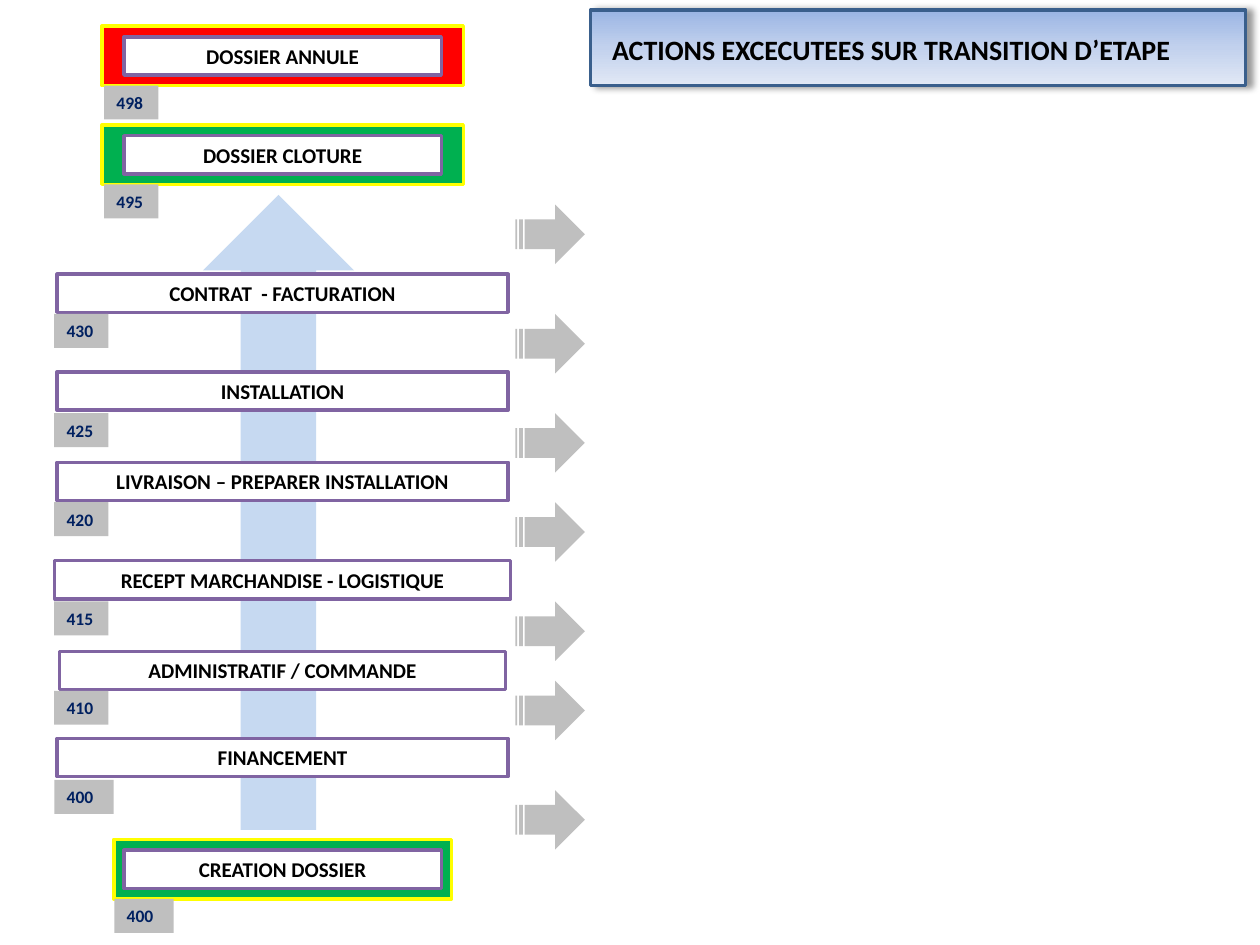
from copy import deepcopy
from dataclasses import dataclass

from lxml.etree import SubElement
from pptx import Presentation
from pptx.dml.color import RGBColor
from pptx.enum.shapes import MSO_SHAPE as Preset
from pptx.enum.text import MSO_AUTO_SIZE as AutoSize, PP_ALIGN as Align
from pptx.oxml.ns import qn
from pptx.shapes.autoshape import Shape
from pptx.util import Pt

COLORS = {
    "black": "000000",
    "white": "FFFFFF",
    "navy": "002060",
    "purple": "8064A2",
    "yellow": "FFFF00",
    "red": "FF0000",
    "green": "00B050",
    "gray": "BFBFBF",
    "pale_blue": "C6D9F1",
    "title_line": "3A5F8C",
    "title_top": "9AB5E4",
    "title_middle": "C2D1ED",
    "title_bottom": "E1E8F5",
}
FONT = "Calibri"
CENTER_X = 161.5
LABEL_HEIGHT = 21.8
TAG_WIDTH, TAG_HEIGHT = 31, 19.4
WIDE_TAG_WIDTH = 34
STEP_TAG_LEFT = 31
END_LABEL_WIDTH = 181.4
FRAME_HEIGHT = 33.9
TRANSITION_LEFT = 294.5


@dataclass
class EndState:
    name: str
    code: str
    top: float
    color: str
    width: float = 206.6
    tag_left: float = 59.5
    tag_width: float = TAG_WIDTH


@dataclass
class Step:
    name: str
    code: str
    top: float
    tag_top: float
    width: float = 257.8
    tag_width: float = TAG_WIDTH


END_STATES = [
    EndState("DOSSIER ANNULE", "498", 15, "red"),
    EndState("DOSSIER CLOTURE", "495", 71.5, "green"),
    EndState("CREATION DOSSIER", "400", 479.8, "green", 193, 65.3, WIDE_TAG_WIDTH),
]
STEPS = [
    Step("CONTRAT  - FACTURATION", "430", 156.7, 179.4),
    Step("INSTALLATION", "425", 212.5, 236.1),
    Step("LIVRAISON – PREPARER INSTALLATION", "420", 264.2, 287),
    Step("RECEPT MARCHANDISE - LOGISTIQUE", "415", 320.4, 343.7, 260.6),
    Step("ADMINISTRATIF / COMMANDE", "410", 372.2, 394.8, 254.9),
    Step("FINANCEMENT", "400", 422, 445.7, tag_width=WIDE_TAG_WIDTH),
]
TRANSITION_TOPS = [116.9, *(step.tag_top for step in STEPS[:4]), 389, 451.5]


def rgb(color: str) -> RGBColor:
    return RGBColor.from_string(COLORS[color])


def add_block(shapes, preset: Preset, left: float, top: float, width: float,
              height: float, fill: str, line: str | None = None) -> Shape:
    block = shapes.add_shape(preset, Pt(left), Pt(top), Pt(width), Pt(height))
    block.shadow.inherit = False
    block.fill.solid()
    block.fill.fore_color.rgb = rgb(fill)
    if line:
        block.line.color.rgb = rgb(line)
        block.line.width = Pt(2)
    else:
        block.line.fill.background()
    return block


def write(shape: Shape, text: str, size: float, color: str, align: Align) -> None:
    frame = shape.text_frame
    frame.word_wrap = True
    frame.auto_size = AutoSize.SHAPE_TO_FIT_TEXT
    paragraph = frame.paragraphs[0]
    paragraph.text = text
    paragraph.alignment = align
    font = paragraph.font
    font.name, font.size, font.bold = FONT, Pt(size), True
    font.color.rgb = rgb(color)


def add_label(shapes, name: str, top: float, width: float) -> None:
    label = add_block(shapes, Preset.RECTANGLE, CENTER_X - width / 2, top,
                      width, LABEL_HEIGHT, "white", "purple")
    write(label, name, 12, "black", Align.CENTER)


def add_tag(shapes, code: str, left: float, top: float, width: float) -> None:
    tag = add_block(shapes, Preset.RECTANGLE, left, top, width, TAG_HEIGHT, "gray")
    write(tag, code, 10, "navy", Align.LEFT)


def add_end_state(shapes, state: EndState) -> None:
    add_block(shapes, Preset.RECTANGLE, CENTER_X - state.width / 2, state.top,
              state.width, FRAME_HEIGHT, state.color, "yellow")
    add_label(shapes, state.name, state.top + (FRAME_HEIGHT - LABEL_HEIGHT) / 2,
              END_LABEL_WIDTH)
    add_tag(shapes, state.code, state.tag_left, state.top + FRAME_HEIGHT,
            state.tag_width)


def add_step(shapes, step: Step) -> None:
    add_label(shapes, step.name, step.top, step.width)
    add_tag(shapes, step.code, STEP_TAG_LEFT, step.tag_top, step.tag_width)


def add_title(shapes) -> None:
    """Draw the shaded, shadowed banner and the heading over it."""
    banner = add_block(shapes, Preset.RECTANGLE, 337.5, 5.7, 374.4, 43.2,
                       "title_top", "title_line")
    banner.fill.gradient()
    banner.fill.gradient_angle = 270
    properties = banner._element.spPr
    first_stop = properties.find(f".//{qn('a:gs')}")
    first_stop.addnext(deepcopy(first_stop))
    shades = ("title_top", "title_middle", "title_bottom")
    for index, (stop, shade) in enumerate(zip(banner.fill.gradient_stops, shades)):
        stop.position = index / 2
        stop.color.rgb = rgb(shade)

    shadow = SubElement(properties.find(qn("a:effectLst")), qn("a:outerShdw"),
                        blurRad=str(Pt(4)), dist=str(Pt(3)), dir="0",
                        algn="l", rotWithShape="0")
    tint = SubElement(shadow, qn("a:srgbClr"), val=COLORS["black"])
    SubElement(tint, qn("a:alpha"), val="40000")

    heading = shapes.add_textbox(Pt(342.7), Pt(15.1), Pt(351.4), Pt(26.7))
    write(heading, "ACTIONS EXCECUTEES SUR TRANSITION D’ETAPE", 16, "black", Align.LEFT)


def main() -> None:
    deck = Presentation()
    deck.slide_width, deck.slide_height = Pt(720), Pt(540)
    shapes = deck.slides.add_slide(deck.slide_layouts[6]).shapes

    add_title(shapes)
    progress = add_block(shapes, Preset.RIGHT_ARROW, -22.3, 249.6, 362.9, 86.4,
                         "pale_blue")
    progress.rotation = 270
    for state in END_STATES:
        add_end_state(shapes, state)
    for step in STEPS:
        add_step(shapes, step)
    for top in TRANSITION_TOPS:
        add_block(shapes, Preset.STRIPED_RIGHT_ARROW, TRANSITION_LEFT, top,
                  39.7, 34, "gray")
    deck.save("out.pptx")


if __name__ == "__main__":
    main()
